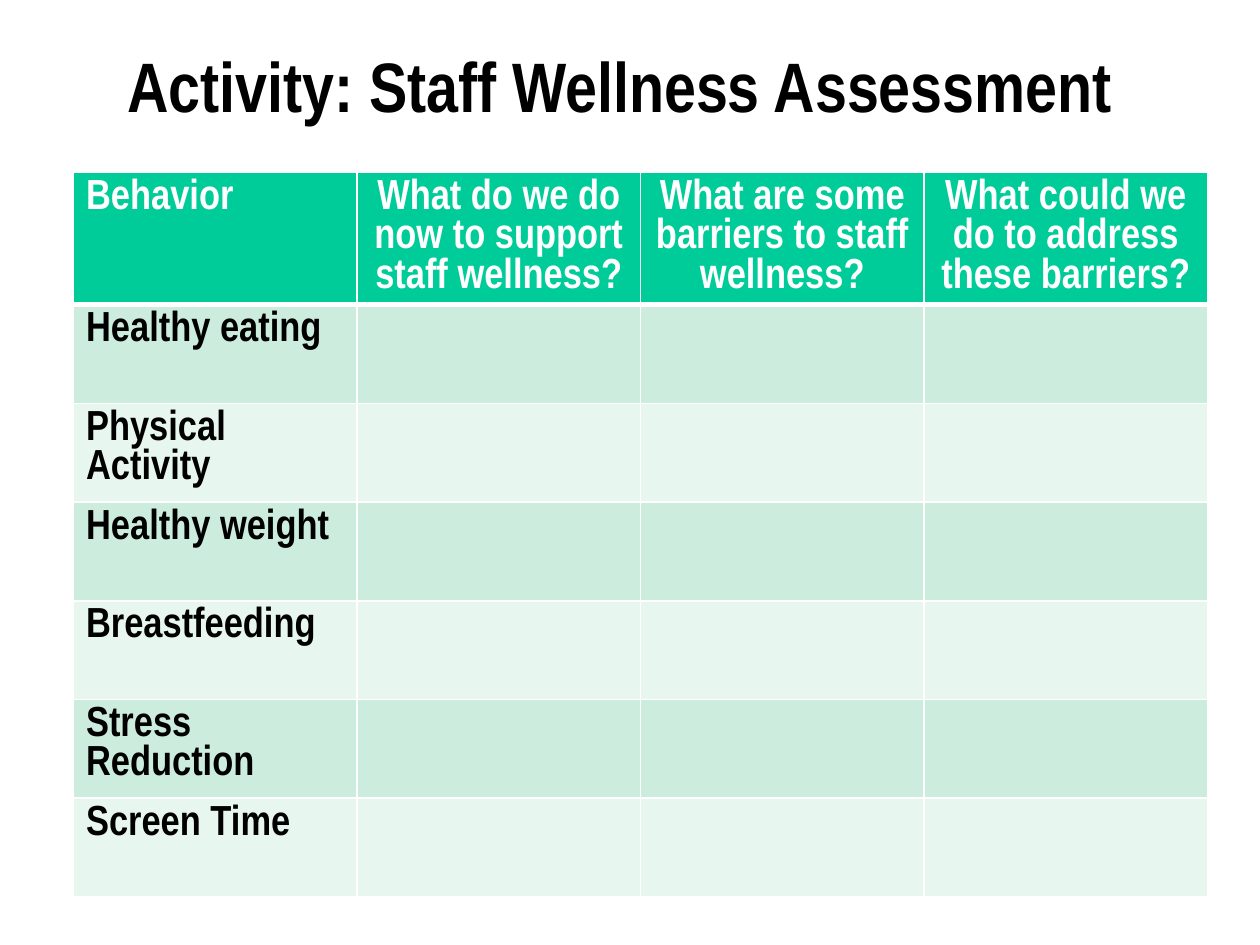
"""Build the staff wellness assessment slide."""
import dataclasses

import lxml.etree
import pptx
import pptx.dml.color
import pptx.enum.text
import pptx.oxml.ns
import pptx.util

Pt = pptx.util.Pt
Align = pptx.enum.text.PP_ALIGN


@dataclasses.dataclass(frozen=True)
class Theme:
    font: str = "Arial Narrow"
    ink: str = "000000"
    white: str = "FFFFFF"
    head: str = "00CC99"
    bands: tuple[str, str] = ("CCECDE", "E7F6EF")
    title: float = 40
    body: float = 24
    thin: float = 1
    thick: float = 3


@dataclasses.dataclass(frozen=True)
class Box:
    left: float
    top: float
    width: float
    height: float


@dataclasses.dataclass(frozen=True)
class Row:
    texts: tuple[str, ...]
    height: float
    fill: str
    color: str
    base: float
    align: Align = Align.LEFT


THEME = Theme()
HEADS = (
    "Behavior",
    "What do we do now to support staff wellness?",
    "What are some barriers to staff wellness?",
    "What could we do to address these barriers?",
)
TOPICS = (
    "Healthy eating",
    "Physical Activity",
    "Healthy weight",
    "Breastfeeding",
    "Stress Reduction",
    "Screen Time",
)
TITLE = Box(36, -12, 636, 120)
GRID = Box(42, 98.6, 648, 414)
HEAD_HEIGHT = 75.6


def rgb(code: str) -> pptx.dml.color.RGBColor:
    return pptx.dml.color.RGBColor.from_string(code)


def style(para, size: float, color: str, align: Align) -> None:
    para.alignment = align
    para.font.name = THEME.font
    para.font.size = Pt(size)
    para.font.bold = True
    para.font.color.rgb = rgb(color)


def border(cell, widths: dict[str, float]) -> None:
    qn = pptx.oxml.ns.qn
    props = cell._tc.get_or_add_tcPr()
    for spot, (side, width) in enumerate(widths.items()):
        line = lxml.etree.Element(qn(f"a:ln{side}"), w=str(Pt(width)))
        fill = lxml.etree.SubElement(line, qn("a:solidFill"))
        lxml.etree.SubElement(fill, qn("a:srgbClr"), val=THEME.white)
        props.insert(spot, line)


def add_title(slide, text: str, box: Box) -> None:
    title = slide.shapes.title
    title.left, title.top = Pt(box.left), Pt(box.top)
    title.width, title.height = Pt(box.width), Pt(box.height)
    frame = title.text_frame
    frame.text = text
    frame.vertical_anchor = pptx.enum.text.MSO_ANCHOR.MIDDLE
    style(frame.paragraphs[0], THEME.title, THEME.ink, Align.CENTER)


def fill_cell(cell, text: str, row: Row, align: Align, top: float) -> None:
    cell.fill.solid()
    cell.fill.fore_color.rgb = rgb(row.fill)
    border(cell, {"L": THEME.thin, "R": THEME.thin, "T": top, "B": row.base})
    if text:
        cell.text = text
    style(cell.text_frame.paragraphs[0], THEME.body, row.color, align)


def add_grid(slide, rows: list[Row], box: Box) -> None:
    cols = len(HEADS)
    frame = slide.shapes.add_table(
        len(rows), cols, Pt(box.left), Pt(box.top), Pt(box.width), Pt(box.height)
    )
    table = frame.table
    for col in table.columns:
        col.width = Pt(box.width / cols)
    top = THEME.thin
    for line, row in zip(table.rows, rows):
        line.height = Pt(row.height)
        for spot, (cell, text) in enumerate(zip(line.cells, row.texts)):
            fill_cell(cell, text, row, row.align if spot else Align.LEFT, top)
        top = row.base


def main() -> None:
    deck = pptx.Presentation()
    deck.slide_width, deck.slide_height = Pt(720), Pt(540)
    slide = deck.slides.add_slide(deck.slide_layouts[5])
    add_title(slide, "Activity: Staff Wellness Assessment", TITLE)
    height = (GRID.height - HEAD_HEIGHT) / len(TOPICS)
    blanks = ("",) * (len(HEADS) - 1)
    rows = [Row(HEADS, HEAD_HEIGHT, THEME.head, THEME.white, THEME.thick, Align.CENTER)]
    for spot, topic in enumerate(TOPICS):
        fill = THEME.bands[spot % 2]
        rows.append(Row((topic, *blanks), height, fill, THEME.ink, THEME.thin))
    add_grid(slide, rows, GRID)
    deck.save("out.pptx")


if __name__ == "__main__":
    main()
